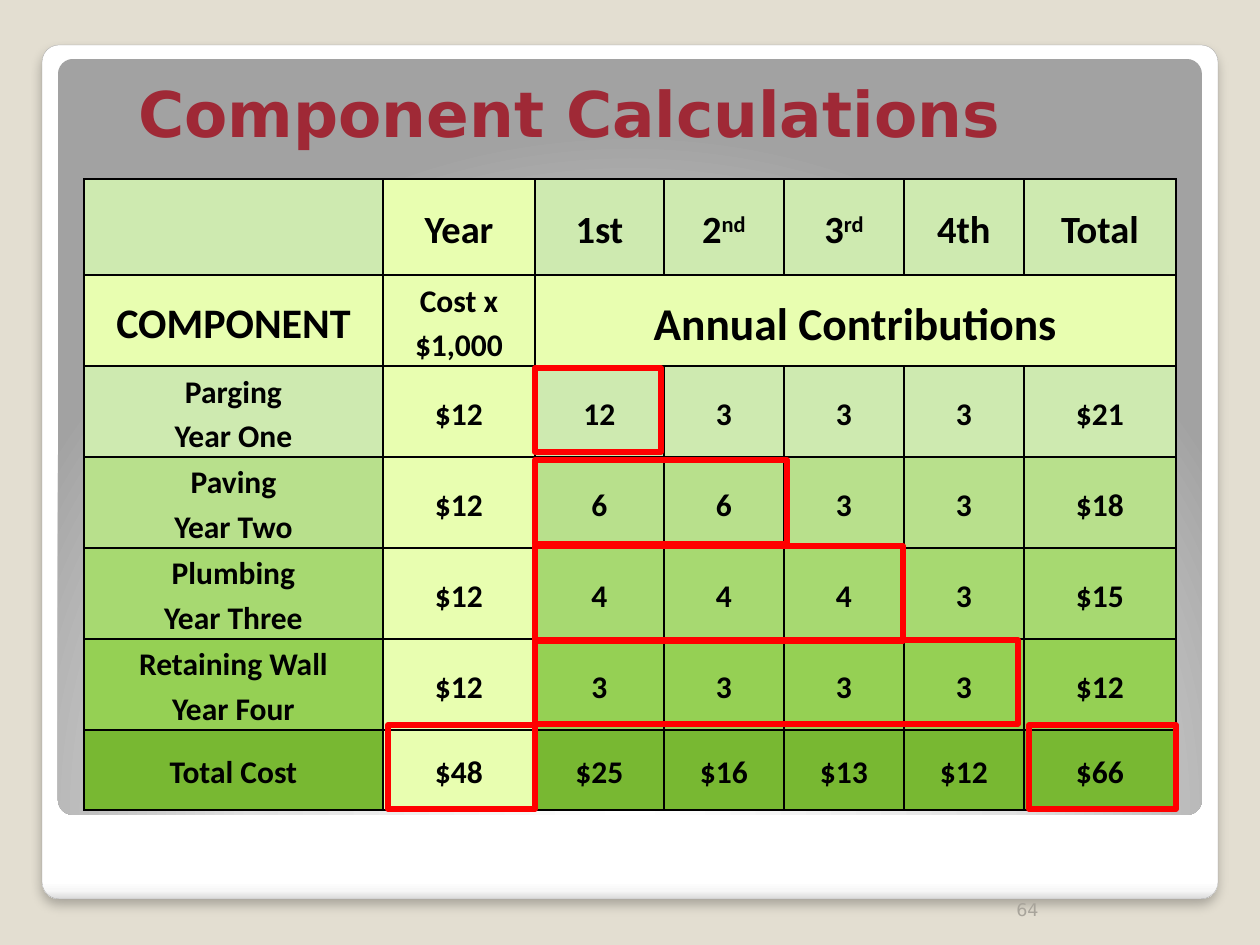
from lxml import etree
from pptx import Presentation
from pptx import util as u
from pptx.dml.color import RGBColor
from pptx.enum import shapes, text
from pptx.oxml import ns

PX = u.Inches(1) / 126
BEIGE = RGBColor(0xE3, 0xDE, 0xD1)
WHITE = RGBColor(0xFF, 0xFF, 0xFF)
SNOW = RGBColor(0xF7, 0xF7, 0xF7)
SILVER = RGBColor(0xE1, 0xE1, 0xE1)
MIST = RGBColor(0xDA, 0xDA, 0xDA)
GRAY = RGBColor(0xA2, 0xA2, 0xA2)
EDGE = RGBColor(0xA4, 0xA4, 0xA4)
STONE = RGBColor(0xA8, 0xA4, 0x9B)
CRIMSON = RGBColor(0x9F, 0x29, 0x36)
RED = RGBColor(0xFF, 0x00, 0x00)
BLACK = RGBColor(0x00, 0x00, 0x00)
LEMON = RGBColor(0xE8, 0xFE, 0xB0)
PALE = RGBColor(0xCE, 0xEA, 0xB0)
LIGHT = RGBColor(0xB8, 0xE0, 0x8C)
SPRING = RGBColor(0xA7, 0xD9, 0x71)
LEAF = RGBColor(0x95, 0xD0, 0x54)
MOSS = RGBColor(0x78, 0xB8, 0x32)

COLUMNS = [299, 152, 129, 120, 120, 120, 152]
ROWS = [96, 91, 91, 91, 91, 91, 80]
ROW_FILLS = [PALE, LEMON, PALE, LIGHT, SPRING, LEAF, MOSS]
COSTS = [
    ["", "Year", "1st", "2^nd", "3^rd", "4th", "Total"],
    ["COMPONENT", "Cost x $1,000", "Annual Contributions", "", "", "", ""],
    ["Parging\nYear One", "$12", "12", "3", "3", "3", "$21"],
    ["Paving\nYear Two", "$12", "6", "6", "3", "3", "$18"],
    ["Plumbing\nYear Three", "$12", "4", "4", "4", "3", "$15"],
    ["Retaining Wall\nYear Four", "$12", "3", "3", "3", "3", "$12"],
    ["Total Cost", "$48", "$25", "$16", "$13", "$12", "$66"],
]
HEADING_SIZES = {"COMPONENT": 24, "Annual Contributions": 26}
HIGHLIGHTS = [
    (451, 189, 126, 84),
    (451, 281, 252, 84),
    (451, 367, 368, 95),
    (451, 461, 483, 84),
    (945, 546, 147, 84),
    (304, 546, 147, 84),
]


def emu(box):
    """Turn pixel lengths into EMU."""
    return [u.Emu(round(length * PX)) for length in box]


def add_xml(parent, tag, **attributes):
    """Append a DrawingML element and return it."""
    values = {name: str(value) for name, value in attributes.items()}
    return etree.SubElement(parent, ns.qn(tag), values)


def add_run(para, words, size, font, color, bold=False, raised=False):
    """Add one formatted run to a paragraph."""
    span = para.add_run()
    span.text = words
    span.font.size, span.font.name, span.font.bold = u.Pt(size), font, bold
    span.font.color.rgb = color
    if raised:
        span._r.get_or_add_rPr().set("baseline", "30000")


def add_panel(page, box, stops, round_glow=False):
    """Draw a rounded panel with a vertical or circular gradient."""
    panel = page.shapes.add_shape(shapes.MSO_SHAPE.ROUNDED_RECTANGLE, *emu(box))
    panel.adjustments[0] = 0.02
    panel.shadow.inherit = False
    panel.fill.gradient()
    gradient = panel._element.spPr.find(ns.qn("a:gradFill"))
    for child in list(gradient):
        gradient.remove(child)
    stop_list = add_xml(gradient, "a:gsLst")
    for percent, color in stops:
        stop = add_xml(stop_list, "a:gs", pos=percent * 1000)
        add_xml(stop, "a:srgbClr", val=color)
    if round_glow:
        glow = add_xml(gradient, "a:path", path="circle")
        add_xml(glow, "a:fillToRect", l=50000, t=175000, r=50000, b=-75000)
    else:
        add_xml(gradient, "a:lin", ang=5400000, scaled=0)
    panel.line.fill.background()
    return panel


def add_frame(page, box):
    """Draw the shadowed card with the gray panel inside it."""
    left, top, width, height = box
    card = add_panel(page, box, [(0, WHITE), (98, WHITE), (99, SNOW), (100, MIST)])
    card.line.color.rgb = EDGE
    card.line.width = u.Pt(0.16)
    effects = card._element.spPr.find(ns.qn("a:effectLst"))
    shadow = add_xml(effects, "a:outerShdw", blurRad=u.Pt(6), dist=u.Pt(4),
                     dir=5400000, algn="tl", rotWithShape=0)
    add_xml(add_xml(shadow, "a:srgbClr", val=BLACK), "a:alpha", val=25000)
    add_panel(page, (left + 16, top + 14, width - 32, height - 98),
              [(0, WHITE), (55, SILVER), (100, GRAY)], round_glow=True)


def add_label(page, box, words, size, color, align, bold=False):
    """Place a line of text at the bottom of its box."""
    frame = page.shapes.add_textbox(*emu(box)).text_frame
    frame.word_wrap = True
    frame.vertical_anchor = text.MSO_ANCHOR.BOTTOM
    para = frame.paragraphs[0]
    para.alignment = align
    add_run(para, words, size, "DejaVu Sans", color, bold)


def style_cell(cell, fill):
    """Give a cell its borders, fill and margins."""
    properties = cell._tc.get_or_add_tcPr()
    for side in ("a:lnL", "a:lnR", "a:lnT", "a:lnB"):
        border = add_xml(properties, side, w=u.Pt(1))
        add_xml(add_xml(border, "a:solidFill"), "a:srgbClr", val=BLACK)
    cell.fill.solid()
    cell.fill.fore_color.rgb = fill
    cell.vertical_anchor = text.MSO_ANCHOR.MIDDLE
    cell.margin_left = cell.margin_right = u.Inches(0.07)
    cell.margin_top = cell.margin_bottom = 0


def write_cell(cell, words, size):
    """Write centred lines, raising what follows a caret."""
    for index, line in enumerate(words.split("\n")):
        frame = cell.text_frame
        para = frame.add_paragraph() if index else frame.paragraphs[0]
        para.alignment = text.PP_ALIGN.CENTER
        para.line_spacing = 1.15
        for part, piece in enumerate(line.split("^")):
            if piece:
                add_run(para, piece, size, "Calibri", BLACK, True, part > 0)


def add_costs(page, box):
    """Build the cost table and the red outlines over it."""
    left, top = box[:2]
    table = page.shapes.add_table(len(ROWS), len(COLUMNS), *emu(box)).table
    for column, width in zip(table.columns, emu(COLUMNS)):
        column.width = width
    for row, height in zip(table.rows, emu(ROWS)):
        row.height = height
    for r, values in enumerate(COSTS):
        for c, words in enumerate(values):
            cell = table.cell(r, c)
            style_cell(cell, LEMON if c == 1 else ROW_FILLS[r])
            write_cell(cell, words, HEADING_SIZES.get(words, 18 if r else 22))
    table.cell(1, 2).merge(table.cell(1, 6))
    for x, y, width, height in HIGHLIGHTS:
        outline = page.shapes.add_shape(
            shapes.MSO_SHAPE.RECTANGLE, *emu((left + x, top + y, width, height)))
        outline.shadow.inherit = False
        outline.fill.background()
        outline.line.color.rgb = RED
        outline.line.width = u.Pt(3.35)


def main():
    """Build and save the slide."""
    deck = Presentation()
    deck.slide_width, deck.slide_height = emu((1260, 945))
    page = deck.slides.add_slide(deck.slide_layouts[6])
    page.background.fill.solid()
    page.background.fill.fore_color.rgb = BEIGE
    add_frame(page, (42, 45, 1176, 854))
    add_label(page, (126, 73, 936, 83), "Component Calculations", 36, CRIMSON,
              text.PP_ALIGN.LEFT, bold=True)
    add_label(page, (809, 861, 242, 65), "64", 10, STONE, text.PP_ALIGN.RIGHT)
    add_costs(page, (84, 179, sum(COLUMNS), sum(ROWS)))
    deck.save("out.pptx")


if __name__ == "__main__":
    main()
